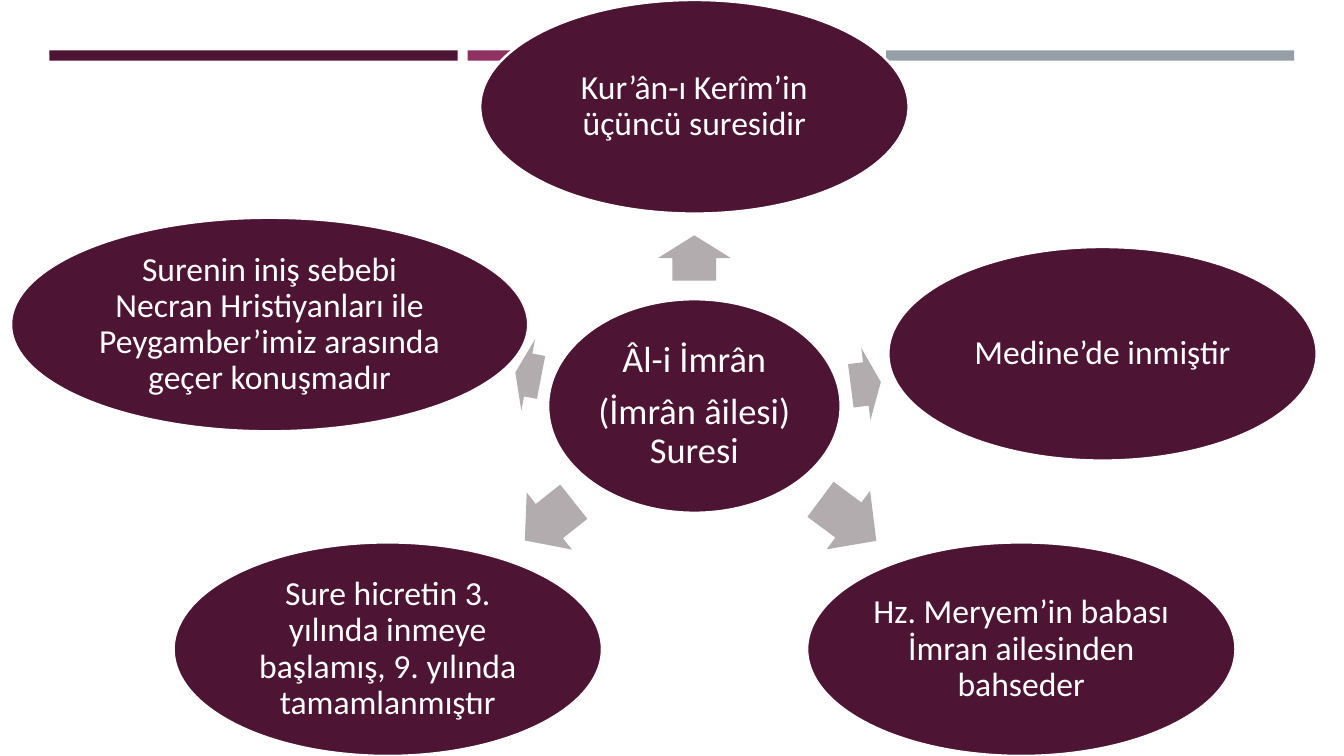
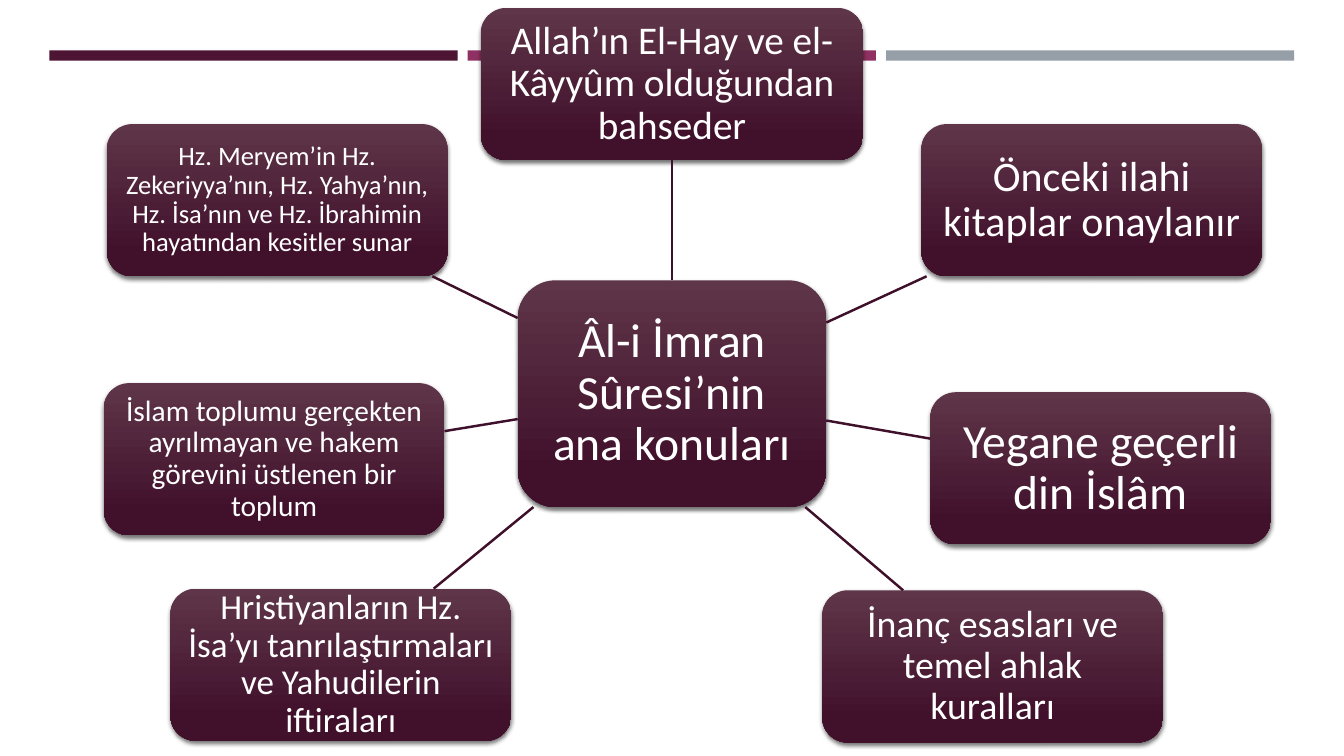
from math import atan2, degrees

from lxml.etree import SubElement
from pptx import Presentation
from pptx.dml.color import RGBColor
from pptx.enum.shapes import MSO_CONNECTOR as CONN, MSO_SHAPE as SHAPE
from pptx.enum.text import MSO_ANCHOR as ANCHOR, PP_ALIGN as ALIGN
from pptx.oxml.ns import qn
from pptx.util import Pt

PLUM = RGBColor(0x4D, 0x14, 0x34)
MAGENTA = RGBColor(0x90, 0x31, 0x63)
SLATE = RGBColor(0x96, 0x9F, 0xA7)
ARROW_GREY = RGBColor(0xB2, 0xAC, 0xAE)
BOX_TOP = RGBColor(0x5F, 0x36, 0x49)
BOX_BOTTOM = RGBColor(0x41, 0x11, 0x2C)
SPOKE = RGBColor(0x3E, 0x10, 0x2A)
BLACK = RGBColor(0, 0, 0)
WHITE = RGBColor(0xFF, 0xFF, 0xFF)
FONT = "Calibri"

BAR_LEFT, BAR_TOP, BAR_W, BAR_H, BAR_STEP = 35.3, 36, 291.6, 7.4, 298.8

SURAH_HUB = (496, 290, 209, 152.6)
FACT_W, FACT_H = 306, 152.6
ARROW_H = 52
FACTS = [
    ("Kur’ân-ı Kerîm’in üçüncü suresidir", 496, 76.3, FACT_W, (496, 184.3, 32.4)),
    ("Medine’de inmiştir", 787.5, 252.7, FACT_W, (618.5, 274.3, 21.6)),
    ("Hz. Meryem’in babası İmran ailesinden bahseder",
     729.5, 463.7, FACT_W, (606, 371.5, 49.7)),
    ("Sure hicretin 3. yılında inmeye başlamış, 9. yılında tamamlanmıştır",
     277, 463.7, FACT_W, (392.4, 372.2, 44.6)),
    ("Surenin iniş sebebi Necran Hristiyanları ile Peygamber’imiz arasında "
     "geçer konuşmadır", 192.6, 231.8, 369.4, (377.3, 267.8, 18.7)),
]

TOPIC_HUB = (480, 281.2, 220.4, 162)
TOPIC_W, TOPIC_H = 243.4, 108.7
TOPICS = [
    ("Allah’ın El-Hay ve el-Kâyyûm olduğundan bahseder", 28, 480, 60, 273),
    ("Önceki ilahi kitaplar onaylanır", 30, 779.8, 143, TOPIC_W),
    ("Yegane geçerli din İslâm", 34, 786.2, 334.5, TOPIC_W),
    ("İnanç esasları ve temel ahlak kuralları", 27, 709, 476, TOPIC_W),
    ("Hristiyanların Hz. İsa’yı tanrılaştırmaları ve Yahudilerin iftiraları",
     25, 243.4, 474.8, TOPIC_W),
    ("İslam toplumu gerçekten ayrılmayan ve hakem görevini üstlenen bir toplum",
     21, 195.8, 328, TOPIC_W),
    ("Hz. Meryem’in Hz. Zekeriyya’nın, Hz. Yahya’nın, Hz. İsa’nın ve "
     "Hz. İbrahimin hayatından kesitler sunar", 19, 198, 143, TOPIC_W),
]


def add_centred(s, kind, x, y, w, h, fill=None, line=None):
    sp = s.shapes.add_shape(kind, Pt(x - w / 2), Pt(y - h / 2), Pt(w), Pt(h))
    sp.shadow.inherit = False
    if fill is not None:
        sp.fill.solid()
        sp.fill.fore_color.rgb = fill
    if line is None:
        sp.line.fill.background()
    else:
        sp.line.color.rgb = line
        sp.line.width = Pt(1.75)
    return sp


def write_text(sp, *paragraphs, size, inset, color=WHITE, gap=0.35):
    tf = sp.text_frame
    tf.word_wrap = True
    tf.vertical_anchor = ANCHOR.MIDDLE
    tf.margin_left = tf.margin_right = tf.margin_top = tf.margin_bottom = Pt(inset)
    for i, text in enumerate(paragraphs):
        p = tf.add_paragraph() if i else tf.paragraphs[0]
        p.alignment = ALIGN.CENTER
        p.line_spacing = 0.9
        p.space_before = Pt(size * gap if i else 0)
        r = p.add_run()
        r.text = text
        r.font.size = Pt(size)
        r.font.name = FONT
        r.font.color.rgb = color


def add_bars(s):
    for i, color in enumerate((PLUM, MAGENTA, SLATE)):
        x = BAR_LEFT + i * BAR_STEP + BAR_W / 2
        add_centred(s, SHAPE.RECTANGLE, x, BAR_TOP + BAR_H / 2, BAR_W, BAR_H, color)


def add_oval(s, x, y, w, h, *paragraphs, size):
    sp = add_centred(s, SHAPE.OVAL, x, y, w, h, PLUM, WHITE)
    write_text(sp, *paragraphs, size=size, inset=size * 0.1)


def add_arrow(s, x, y, length, angle):
    sp = add_centred(s, SHAPE.RIGHT_ARROW, x, y, length, ARROW_H, ARROW_GREY)
    sp.adjustments[0] = 0.6
    sp.adjustments[1] = 0.5
    sp.rotation = angle


def add_box(s, x, y, w, h, text, size):
    sp = add_centred(s, SHAPE.ROUNDED_RECTANGLE, x, y, w, h)
    sp.fill.gradient()
    sp.fill.gradient_angle = 270
    for stop, color, position in zip(
            sp.fill.gradient_stops, (BOX_TOP, BOX_BOTTOM), (0, 0.84)):
        stop.color.rgb = color
        stop.position = position
    effects = sp._element.spPr.find(qn("a:effectLst"))
    shadow = SubElement(effects, qn("a:outerShdw"), blurRad=str(Pt(3)),
                        dist=str(Pt(2)), dir="5400000", rotWithShape="0")
    color = SubElement(shadow, qn("a:srgbClr"), val=str(BLACK))
    SubElement(color, qn("a:alpha"), val="55000")
    write_text(sp, text, size=size, inset=size * 0.19)
    return sp


def edge_point(x, y, w, h, dx, dy):
    t = min(size / 2 / abs(d) for size, d in ((w, dx), (h, dy)) if d)
    return Pt(x + dx * t), Pt(y + dy * t)


def add_spoke(s, hub, hub_at, box, box_at):
    dx, dy = box_at[0] - hub_at[0], box_at[1] - hub_at[1]
    cx = s.shapes.add_connector(CONN.STRAIGHT, *edge_point(*hub_at, dx, dy),
                                *edge_point(*box_at, -dx, -dy))
    cx.line.color.rgb = SPOKE
    cx.line.width = Pt(1.75)
    SubElement(cx._element.spPr, qn("a:effectLst"))
    if dx == 0:
        cx.begin_connect(hub, 0)
        cx.end_connect(box, 2)


def add_slide(prs):
    s = prs.slides.add_slide(prs.slide_layouts[6])
    add_bars(s)
    return s


def build_surah_facts(prs):
    s = add_slide(prs)
    add_oval(s, *SURAH_HUB, "Âl-i İmrân", "(İmrân âilesi) Suresi", size=26)
    for text, x, y, w, arrow in FACTS:
        angle = degrees(atan2(y - SURAH_HUB[1], x - SURAH_HUB[0])) % 360
        add_arrow(s, *arrow, angle)
        add_oval(s, x, y, w, FACT_H, text, size=24)


def build_main_topics(prs):
    s = add_slide(prs)
    hub = add_box(s, *TOPIC_HUB, "Âl-i İmran Sûresi’nin ana konuları", 34)
    for text, size, x, y, w in TOPICS:
        at = (x, y, w, TOPIC_H)
        box = add_box(s, *at, text, size)
        add_spoke(s, hub, TOPIC_HUB, box, at)


def main():
    prs = Presentation()
    prs.slide_width, prs.slide_height = Pt(960), Pt(540)
    build_surah_facts(prs)
    build_main_topics(prs)
    prs.save("out.pptx")


if __name__ == "__main__":
    main()
